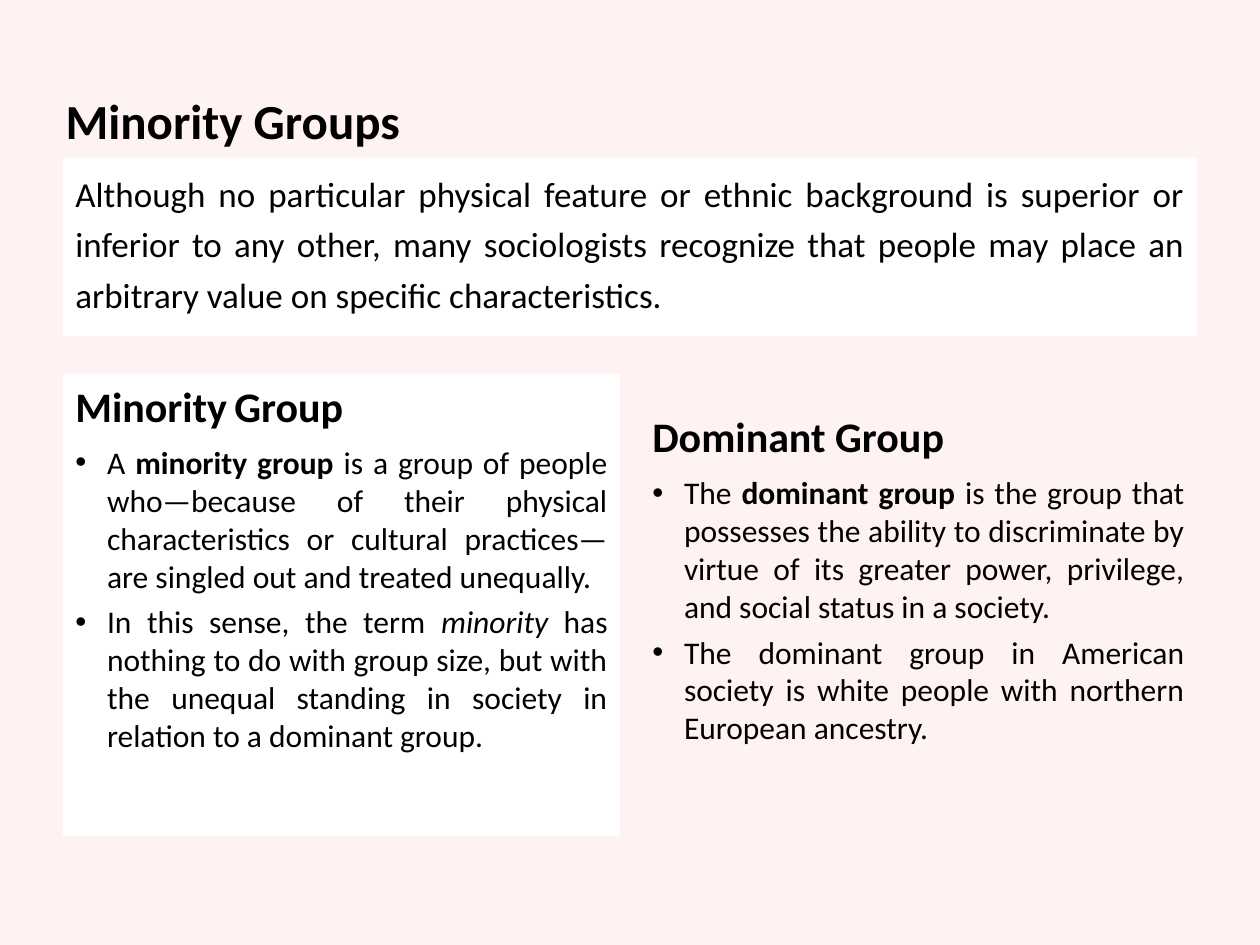
from dataclasses import dataclass

import pptx
import pptx.dml.color
import pptx.enum.shapes
import pptx.enum.text
import pptx.oxml.ns
import pptx.util
from lxml import etree
from pptx.util import Cm

COLORS = {"background": "FFF2F2", "panel": "FFFFFF", "text": "000000"}
FONT = "Calibri"
JUSTIFY = pptx.enum.text.PP_ALIGN.JUSTIFY


@dataclass
class Run:
    text: str
    bold: bool = False
    italic: bool = False
    size: int = 18


@dataclass
class Group:
    left: float
    top: float
    filled: bool
    heading: list[Run]
    bullets: list[list[Run]]


GROUPS = [
    Group(
        1.27, 7.54, True,
        [Run("Minority", True, size=24), Run(" ", True), Run("Group", True, size=24)],
        [
            [
                Run("A "),
                Run("minority group", bold=True),
                Run(" is a group of people who—because of their physical characteristics "
                    "or cultural practices—are singled out and treated unequally."),
            ],
            [
                Run("In this sense, the term "),
                Run("minority", italic=True),
                Run(" has nothing to do with group size, but with the unequal standing "
                    "in society in relation to a dominant group."),
            ],
        ],
    ),
    Group(
        12.9, 8.15, False,
        [Run("Dominant Group", True, size=24)],
        [
            [
                Run("The "),
                Run("dominant group", bold=True),
                Run(" is the group that possesses the ability to discriminate by virtue "
                    "of its greater power, privilege, and social status in a society."),
            ],
            [Run("The dominant group in American society is white people with northern "
                 "European ancestry.")],
        ],
    ),
]


def color(name: str) -> pptx.dml.color.RGBColor:
    return pptx.dml.color.RGBColor.from_string(COLORS[name])


def write_text(paragraph, runs: list[Run], *, alignment=JUSTIFY, line_spacing=None,
               space_after=0, hanging=0, bullet=False) -> None:
    properties = paragraph._p.get_or_add_pPr()
    if hanging:
        properties.set("marL", str(Cm(hanging)))
        properties.set("indent", str(-Cm(hanging)))
    if bullet:
        bullet_font = etree.SubElement(properties, pptx.oxml.ns.qn("a:buFont"))
        bullet_font.set("typeface", "Arial")
        etree.SubElement(properties, pptx.oxml.ns.qn("a:buChar")).set("char", "•")
    paragraph.alignment = alignment
    paragraph.line_spacing = line_spacing
    paragraph.space_before = pptx.util.Pt(0)
    paragraph.space_after = pptx.util.Pt(space_after)
    for item in runs:
        run = paragraph.add_run()
        run.text = item.text
        run.font.name = FONT
        run.font.size = pptx.util.Pt(item.size)
        run.font.bold = item.bold
        run.font.italic = item.italic
        run.font.color.rgb = color("text")


def prepare_frame(shape):
    frame = shape.text_frame
    frame.word_wrap = True
    frame.auto_size = pptx.enum.text.MSO_AUTO_SIZE.NONE
    frame.vertical_anchor = pptx.enum.text.MSO_ANCHOR.TOP
    return frame


def add_panel(slide, left: float, top: float, width: float, height: float, filled: bool):
    bounds = Cm(left), Cm(top), Cm(width), Cm(height)
    if filled:
        shape = slide.shapes.add_shape(pptx.enum.shapes.MSO_SHAPE.RECTANGLE, *bounds)
        shape.shadow.inherit = False
        shape.fill.solid()
        shape.fill.fore_color.rgb = color("panel")
        shape.line.fill.background()
    else:
        shape = slide.shapes.add_textbox(*bounds)
    return prepare_frame(shape)


def add_group(slide, group: Group) -> None:
    frame = add_panel(slide, group.left, group.top, 11.23, 9.32, group.filled)
    write_text(frame.paragraphs[0], group.heading, space_after=7.2, hanging=0.64)
    for runs in group.bullets:
        write_text(frame.add_paragraph(), runs, space_after=4.5, hanging=0.64, bullet=True)


def main() -> None:
    presentation = pptx.Presentation()
    presentation.slide_width = Cm(25.4)
    presentation.slide_height = Cm(19.05)
    slide = presentation.slides.add_slide(presentation.slide_layouts[5])
    slide.background.fill.solid()
    slide.background.fill.fore_color.rgb = color("background")

    title = slide.shapes.title
    title.left, title.top, title.width, title.height = Cm(1.07), Cm(1.7), Cm(22.66), Cm(1.47)
    write_text(prepare_frame(title).paragraphs[0], [Run("Minority Groups", True, size=28)],
               alignment=pptx.enum.text.PP_ALIGN.LEFT)

    introduction = add_panel(slide, 1.27, 3.18, 22.86, 3.6, True)
    write_text(
        introduction.paragraphs[0],
        [Run("Although no particular physical feature or ethnic background is superior or "
             "inferior to any other, many sociologists recognize that people may place an "
             "arbitrary value on specific characteristics.", size=20)],
        line_spacing=1.2,
    )
    for group in GROUPS:
        add_group(slide, group)
    presentation.save("out.pptx")


if __name__ == "__main__":
    main()
